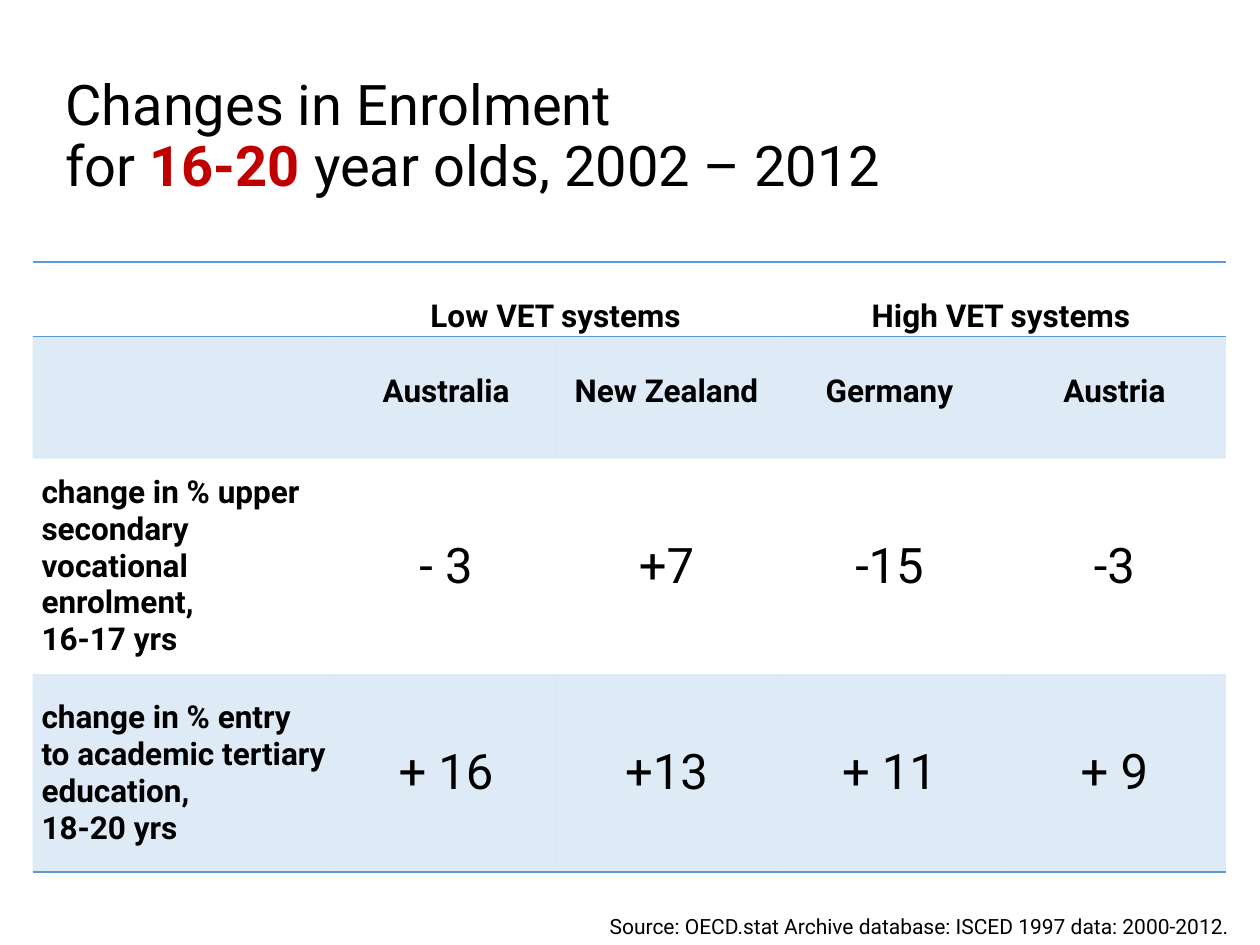
"""Build a slide with a table of enrolment changes in four countries."""
from lxml.etree import SubElement
from pptx import Presentation
from pptx.dml.color import RGBColor
from pptx.enum.text import MSO_ANCHOR, PP_ALIGN
from pptx.oxml import parse_xml
from pptx.oxml.ns import nsdecls, qn
from pptx.util import Inches, Pt

BLACK = RGBColor(0, 0, 0)
RED = RGBColor(0xC0, 0, 0)
BLUE = RGBColor(0x5B, 0x9B, 0xD5)
FACE = "Roboto"
PLAIN = "{2D5ABB26-0587-4C30-8999-92F81FD0307C}"


def style(font, size, bold=False, color=BLACK):
    font.name = FACE
    font.size = Pt(size)
    font.bold = bold
    font.color.rgb = color


def rule(cell, sides):
    for spot, side in enumerate(sides):
        line = parse_xml(
            f'<a:ln{side} {nsdecls("a")} w="12700"><a:solidFill>'
            f'<a:srgbClr val="{BLUE}"/></a:solidFill></a:ln{side}>'
        )
        cell._tc.get_or_add_tcPr().insert(spot, line)


deck = Presentation()
deck.slide_width = Inches(10)
deck.slide_height = Inches(7.5)
slide = deck.slides.add_slide(deck.slide_layouts[6])

box = slide.shapes.add_textbox(Inches(0.42), Inches(0.37), Inches(8.62), Inches(1.45))
frame = box.text_frame
frame.word_wrap = True
frame.vertical_anchor = MSO_ANCHOR.MIDDLE
title = frame.paragraphs[0]
title.line_spacing = 0.9
style(title.font, 32)
title.add_run().text = "Changes in Enrolment"
title.add_line_break()
title.add_run().text = "for "
ages = title.add_run()
ages.text = "16-20"
style(ages.font, 32, True, RED)
title.add_run().text = " year olds, 2002 – 2012"

rows = [
    ["", "Low VET systems", "", "High VET systems", ""],
    ["", "Australia", "New Zealand", "Germany", "Austria"],
    ["change in % upper secondary vocational enrolment,\n16-17 yrs",
     "- 3", "+7", "-15", "-3"],
    ["change in % entry to academic tertiary education,\n18-20 yrs",
     "+ 16", "+13", "+ 11", "+ 9"],
]
widths = [2.4, 1.76, 1.74, 1.8, 1.77]
heights = [0.58, 0.97, 1.71, 1.57]
edges = {0: "TB", 3: "B"}

table = slide.shapes.add_table(
    len(rows), len(widths), Inches(0.26), Inches(2.08),
    Inches(sum(widths)), Inches(sum(heights)),
).table
table.first_row = False
table.horz_banding = False
table._tbl.tblPr.find(qn("a:tableStyleId")).text = PLAIN
for col, width in zip(table.columns, widths):
    col.width = Inches(width)
for row, height in zip(table.rows, heights):
    row.height = Inches(height)

for r, texts in enumerate(rows):
    head = r < 2
    for c, text in enumerate(texts):
        cell = table.cell(r, c)
        cell.text = text
        cell.margin_left = cell.margin_right = Inches(0.07)
        cell.margin_top = Inches(0.29 if head and text else 0)
        cell.margin_bottom = 0
        cell.vertical_anchor = MSO_ANCHOR.TOP if head else MSO_ANCHOR.MIDDLE
        label = head or c == 0
        for para in cell.text_frame.paragraphs:
            para.alignment = PP_ALIGN.CENTER if c else PP_ALIGN.LEFT
            style(para.font, 18 if label else 28, label)
        if r % 2:
            cell.fill.solid()
            cell.fill.fore_color.rgb = BLUE
            tint = cell._tc.tcPr.find(".//" + qn("a:srgbClr"))
            SubElement(tint, qn("a:alpha")).set("val", "20000")
        else:
            cell.fill.background()
        rule(cell, edges.get(r, ""))

for c in (1, 3):
    table.cell(0, c).merge(table.cell(0, c + 1))

note = slide.shapes.add_textbox(Inches(4.74), Inches(7.2), Inches(7.28), Inches(0.3))
note.text_frame.word_wrap = True
source = note.text_frame.paragraphs[0]
source.text = "Source: OECD.stat Archive database: ISCED 1997 data: 2000-2012."
style(source.font, 12)

deck.save("out.pptx")
